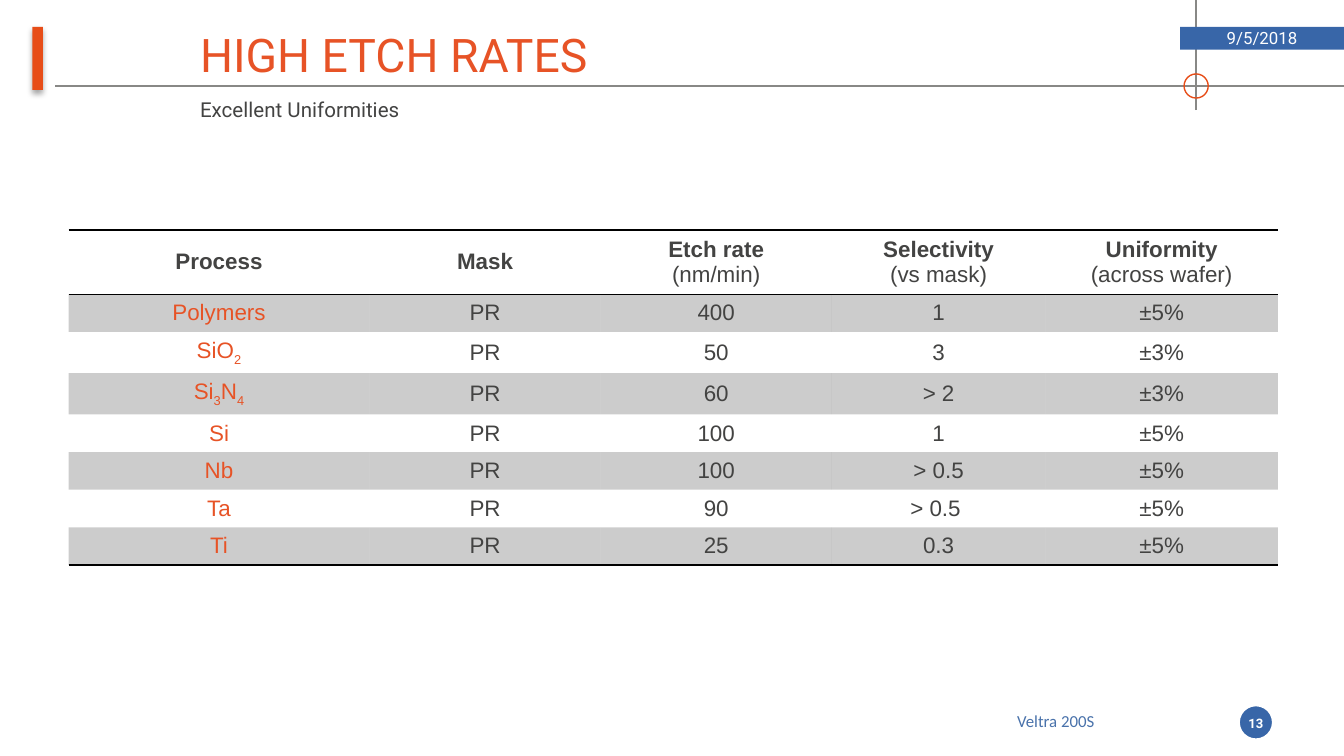
from itertools import groupby

from lxml.etree import SubElement
from pptx import Presentation
from pptx.dml.color import RGBColor
from pptx.enum.shapes import MSO_CONNECTOR, MSO_SHAPE
from pptx.enum.text import MSO_ANCHOR, PP_ALIGN
from pptx.oxml import parse_xml
from pptx.oxml.ns import nsdecls, qn
from pptx.util import Inches, Pt

ORANGE = RGBColor(0xE7, 0x4D, 0x18)
TITLE_ORANGE = RGBColor(0xE7, 0x53, 0x26)
BLUE = RGBColor(0x38, 0x66, 0xA8)
FOOTER_BLUE = RGBColor(0x49, 0x72, 0xAB)
GRAY = RGBColor(0x88, 0x88, 0x86)
INK = RGBColor(0x43, 0x43, 0x42)
BLACK = RGBColor(0, 0, 0)
WHITE = RGBColor(255, 255, 255)

TITLE = "HIGH ETCH RATES"
SUBTITLE = "Excellent Uniformities"
DATE = "9/5/2018"
FOOTER = "Veltra 200S"
PAGE = "13"

HEADERS = [
    ("Process",),
    ("Mask",),
    ("Etch rate", "(nm/min)"),
    ("Selectivity", "(vs mask)"),
    ("Uniformity", "(across wafer)"),
]
ROWS = [
    ("Polymers", "PR", "400", "1", "±5%"),
    ("SiO2", "PR", "50", "3", "±3%"),
    ("Si3N4", "PR", "60", "> 2", "±3%"),
    ("Si", "PR", "100", "1", "±5%"),
    ("Nb", "PR", "100", "> 0.5", "±5%"),
    ("Ta", "PR", "90", "> 0.5 ", "±5%"),
    ("Ti", "PR", "25", "0.3", "±5%"),
]
COL_WIDTHS = [2.24, 1.72, 1.72, 1.59, 1.73]
HEADER_H, ROW_H, TABLE_H, CELL_INSET = 0.39, 0.26, 2.6, 0.04
TABLE_LEFT, TABLE_TOP = 0.51, 1.71
RULE_Y, CROSS_X, RING = 0.64, 8.9, 0.18
TEXT_X = 1.39
NO_STYLE = "{2D5ABB26-0587-4C30-8999-92F81FD0307C}"

prs = Presentation()
prs.slide_width = Inches(10)
prs.slide_height = prs.slide_width * 9 // 16
s = prs.slides.add_slide(prs.slide_layouts[6])


def style(r, size, font, color, bold=False):
    r.font.size, r.font.name, r.font.bold = Pt(size), font, bold
    r.font.color.rgb = color


def line(x1, y1, x2, y2):
    c = s.shapes.add_connector(MSO_CONNECTOR.STRAIGHT, *map(Inches, (x1, y1, x2, y2)))
    c.line.color.rgb, c.line.width = GRAY, Pt(0.75)
    SubElement(c._element.spPr, qn("a:effectLst"))


def shape(kind, box, fill=None, edge=None, width=0.75):
    sp = s.shapes.add_shape(kind, *map(Inches, box))
    sp.shadow.inherit = False
    if fill is None:
        sp.fill.background()
    else:
        sp.fill.solid()
        sp.fill.fore_color.rgb = fill
    if edge is None:
        sp.line.fill.background()
    else:
        sp.line.color.rgb, sp.line.width = edge, Pt(width)
    return sp


def write(sp, text, size, font, color, bold=False, align=PP_ALIGN.CENTER,
          anchor=MSO_ANCHOR.MIDDLE, inset=(0, 0)):
    tf = sp.text_frame
    tf.word_wrap, tf.vertical_anchor = True, anchor
    tf.margin_left = tf.margin_right = Inches(inset[0])
    tf.margin_top = tf.margin_bottom = Inches(inset[1])
    p = tf.paragraphs[0]
    p.text, p.alignment = text, align
    style(p.runs[0], size, font, color, bold)


def textbox(box):
    return s.shapes.add_textbox(*map(Inches, box))


def set_borders(cell, visible):
    for side in ("lnL", "lnR", "lnT", "lnB"):
        paint = (f'<a:solidFill><a:srgbClr val="{BLACK}"/></a:solidFill>'
                 if side in visible else "<a:noFill/>")
        cell._tc.get_or_add_tcPr().append(parse_xml(
            f'<a:{side} {nsdecls("a")} w="{Pt(1)}">{paint}</a:{side}>'))


def shade(cell):
    cell.fill.solid()
    cell.fill.fore_color.rgb = BLACK
    color = cell._tc.tcPr.find(qn("a:solidFill"))[0]
    SubElement(color, qn("a:alpha"), val="20000")


def fill_header(cell, lines):
    cell.text_frame.text = "\n".join(lines)
    for i, p in enumerate(cell.text_frame.paragraphs):
        style(p.runs[0], 12, "Arial", INK, i == 0)


def fill_formula(cell, formula):
    p = cell.text_frame.paragraphs[0]
    for is_digit, chars in groupby(formula, str.isdigit):
        r = p.add_run()
        r.text = "".join(chars)
        style(r, 12, "Arial", TITLE_ORANGE)
        if is_digit:
            r.font._element.set("baseline", "-25000")


def fill_value(cell, value):
    cell.text_frame.text = value
    style(cell.text_frame.paragraphs[0].runs[0], 12, "Arial", INK)


line(0.41, RULE_Y, 10, RULE_Y)
line(CROSS_X, 0.82, CROSS_X, 0)
shape(MSO_SHAPE.OVAL, (CROSS_X - RING / 2, RULE_Y - RING / 2, RING, RING), edge=ORANGE)
accent = shape(MSO_SHAPE.RECTANGLE, (0.24, 0.2, 0.08, 0.47), ORANGE)
accent._element.spPr.find(qn("a:effectLst")).append(parse_xml(
    f'<a:outerShdw {nsdecls("a")} blurRad="{Pt(3.1)}" dist="{Pt(1.8)}" dir="5400000" '
    f'rotWithShape="0"><a:srgbClr val="{BLACK}"><a:alpha val="35000"/></a:srgbClr>'
    '</a:outerShdw>'))
shape(MSO_SHAPE.OVAL, (9.21, 5.24, 0.27, 0.27), BLUE, WHITE, 2.25)

write(textbox((TEXT_X, 0.14, 7.39, 0.52)), TITLE, 24.8, "Roboto", TITLE_ORANGE,
      align=PP_ALIGN.LEFT, inset=(0.1, 0.05))
write(shape(MSO_SHAPE.RECTANGLE, (8.78, 0.2, 1.22, 0.17), BLUE), DATE, 9, "Roboto", WHITE)
write(shape(MSO_SHAPE.RECTANGLE, (6.81, 5.24, 2.09, 0.25), WHITE), FOOTER, 9, "Calibri",
      FOOTER_BLUE)
write(textbox((9.18, 5.24, 0.33, 0.28)), PAGE, 7, "Roboto", WHITE, bold=True)
write(textbox((TEXT_X, 0.67, 2.76, 0.28)), SUBTITLE, 11, "Roboto", INK,
      align=PP_ALIGN.LEFT, anchor=MSO_ANCHOR.TOP, inset=(0.1, 0.05))

frame = s.shapes.add_table(
    len(ROWS) + 1, len(HEADERS), Inches(TABLE_LEFT), Inches(TABLE_TOP),
    Inches(sum(COL_WIDTHS)), Inches(TABLE_H))
table = frame.table
table.first_row = table.horz_banding = False
table._tbl.tblPr.find(qn("a:tableStyleId")).text = NO_STYLE
for column, width in zip(table.columns, COL_WIDTHS):
    column.width = Inches(width)

for i, values in enumerate([HEADERS, *ROWS]):
    table.rows[i].height = Inches(ROW_H if i else HEADER_H)
    for j, value in enumerate(values):
        cell = table.cell(i, j)
        write_cell = fill_header if i == 0 else fill_value if j else fill_formula
        write_cell(cell, value)
        cell.vertical_anchor = MSO_ANCHOR.MIDDLE
        cell.margin_top = cell.margin_bottom = Inches(CELL_INSET)
        for p in cell.text_frame.paragraphs:
            p.alignment = PP_ALIGN.CENTER
        top = {"lnT"} if i < 2 else set()
        bottom = {"lnB"} if i in (0, len(ROWS)) else set()
        set_borders(cell, top | bottom)
        if i % 2:
            shade(cell)
        else:
            cell.fill.background()
frame.height = Inches(TABLE_H)

prs.save("out.pptx")
